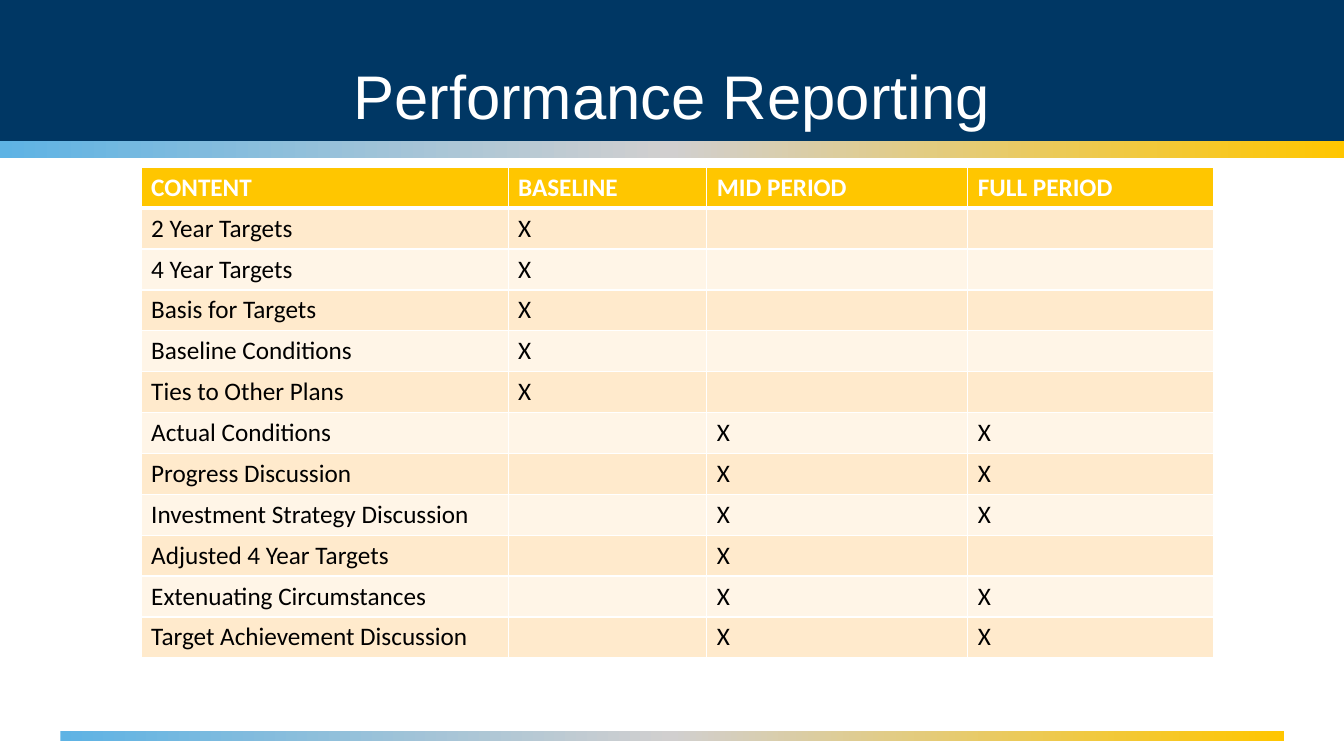
from copy import deepcopy

from lxml.etree import SubElement
from pptx import Presentation
from pptx.dml.color import RGBColor
from pptx.enum.shapes import MSO_SHAPE
from pptx.enum.text import MSO_ANCHOR, PP_ALIGN
from pptx.oxml.ns import qn
from pptx.util import Inches, Pt

COLORS = {
    "navy": "003764",
    "sky": "5EB3E4",
    "silver": "D1CFCF",
    "gold": "FFC600",
    "band_dark": "FFEACC",
    "band_light": "FFF5E7",
    "white": "FFFFFF",
    "black": "000000",
}
GRADIENT = [(0, "sky"), (0.5, "silver"), (1, "gold")]
SLIDE_WIDTH, SLIDE_HEIGHT = 13.33, 7.5

HEADINGS = ["CONTENT", "BASELINE", "MID PERIOD", "FULL PERIOD"]
COLUMN_WIDTHS = [3.64, 1.97, 2.59, 2.44]
BASELINE, MID, BOTH = ["X", "", ""], ["", "X", ""], ["", "X", "X"]
REPORT_ITEMS = [
    ("2 Year Targets", BASELINE),
    ("4 Year Targets", BASELINE),
    ("Basis for Targets", BASELINE),
    ("Baseline Conditions", BASELINE),
    ("Ties to Other Plans", BASELINE),
    ("Actual Conditions", BOTH),
    ("Progress Discussion", BOTH),
    ("Investment Strategy Discussion", BOTH),
    ("Adjusted 4 Year Targets", MID),
    ("Extenuating Circumstances", BOTH),
    ("Target Achievement Discussion", BOTH),
]


def rgb(name):
    return RGBColor.from_string(COLORS[name])


class SlideBuilder:
    """Holds the current slide and the fonts used on it."""

    title_font, title_size = "Arial", 44
    table_font, table_size = "Calibri", 18

    def __init__(self, slide):
        self.slide = slide

    def bar(self, left, top, width, height):
        shape = self.slide.shapes.add_shape(
            MSO_SHAPE.RECTANGLE, Inches(left), Inches(top), Inches(width), Inches(height))
        shape.shadow.inherit = False
        shape.line.fill.background()
        return shape

    def solid_bar(self, *box, color):
        fill = self.bar(*box).fill
        fill.solid()
        fill.fore_color.rgb = rgb(color)

    def gradient_bar(self, *box):
        shape = self.bar(*box)
        shape.fill.gradient()
        shape.fill.gradient_angle = 0
        stop_list = next(shape._element.iter(qn("a:gsLst")))
        stop_list.insert(1, deepcopy(stop_list[0]))
        for stop, (position, color) in zip(shape.fill.gradient_stops, GRADIENT):
            stop.position = position
            stop.color.rgb = rgb(color)

    def title(self, text, left, top, width, height):
        shape = self.slide.shapes.title
        self.slide.shapes._spTree.append(shape._element)  # bring in front of the bars
        shape.left, shape.top = Inches(left), Inches(top)
        shape.width, shape.height = Inches(width), Inches(height)
        shape.text_frame.text = text
        shape.text_frame.vertical_anchor = MSO_ANCHOR.MIDDLE
        paragraph = shape.text_frame.paragraphs[0]
        paragraph.alignment = PP_ALIGN.CENTER
        paragraph.line_spacing = 0.9
        self.style_runs(paragraph, self.title_font, self.title_size, "white", False)

    def style_runs(self, paragraph, font_name, size, color, bold):
        for run in paragraph.runs:
            run.font.name, run.font.size, run.font.bold = font_name, Pt(size), bold
            run.font.color.rgb = rgb(color)

    def table(self, rows, column_widths, left, top, height):
        table = self.slide.shapes.add_table(
            len(rows), len(column_widths), Inches(left), Inches(top),
            Inches(sum(column_widths)), Inches(height)).table
        table.horz_banding = False
        for column, width in zip(table.columns, column_widths):
            column.width = Inches(width)
        for row_index, texts in enumerate(rows):
            for column_index, text in enumerate(texts):
                self.cell(table.cell(row_index, column_index), text, row_index)

    def cell(self, cell, text, row_index):
        is_header = row_index == 0
        self.cell_borders(cell, top=3 if row_index == 1 else 1, bottom=3 if is_header else 1)
        fill_color = "gold" if is_header else ("band_light", "band_dark")[row_index % 2]
        cell.fill.solid()
        cell.fill.fore_color.rgb = rgb(fill_color)
        cell.text_frame.text = text
        self.style_runs(cell.text_frame.paragraphs[0], self.table_font, self.table_size,
                        "white" if is_header else "black", is_header)

    def cell_borders(self, cell, top, bottom):
        """Draw white borders; must run before the fill is set to keep the XML order."""
        properties = cell._tc.get_or_add_tcPr()
        for side, width in (("L", 1), ("R", 1), ("T", top), ("B", bottom)):
            line = SubElement(properties, qn(f"a:ln{side}"), w=str(Pt(width)))
            SubElement(SubElement(line, qn("a:solidFill")), qn("a:srgbClr"), val=COLORS["white"])


def main():
    presentation = Presentation()
    presentation.slide_width = Inches(SLIDE_WIDTH)
    presentation.slide_height = Inches(SLIDE_HEIGHT)
    title_only = presentation.slide_layouts[5]
    builder = SlideBuilder(presentation.slides.add_slide(title_only))

    builder.solid_bar(0, 0, SLIDE_WIDTH, 1.4, color="navy")
    builder.gradient_bar(0, 1.4, SLIDE_WIDTH, 0.17)
    builder.gradient_bar(0.6, 7.25, 12.14, 0.1)
    builder.title("Performance Reporting", 0, 0.39, SLIDE_WIDTH, 1.19)
    rows = [HEADINGS] + [[item, *marks] for item, marks in REPORT_ITEMS]
    builder.table(rows, COLUMN_WIDTHS, left=1.4, top=1.66, height=4.87)

    presentation.save("out.pptx")


if __name__ == "__main__":
    main()
